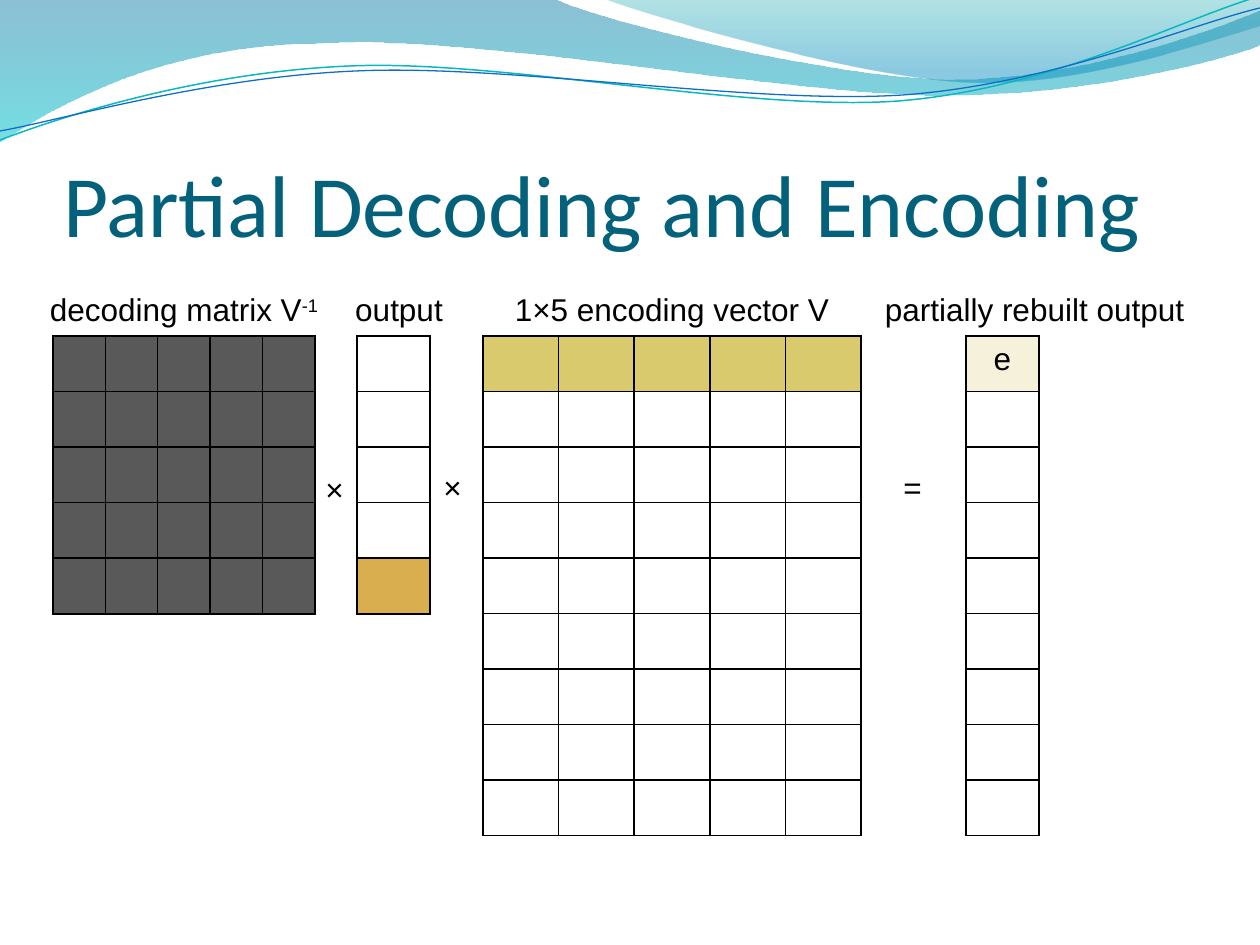
from lxml import etree
from pptx import Presentation
from pptx.dml.color import RGBColor
from pptx.enum.text import MSO_ANCHOR, MSO_AUTO_SIZE, PP_ALIGN
from pptx.oxml import parse_xml
from pptx.oxml.ns import qn
from pptx.util import Pt

PX = 914400 / 126
LEFT, CENTER = PP_ALIGN.LEFT, PP_ALIGN.CENTER
TOP, BOTTOM = MSO_ANCHOR.TOP, MSO_ANCHOR.BOTTOM
NO_FIT, GROW = MSO_AUTO_SIZE.NONE, MSO_AUTO_SIZE.SHAPE_TO_FIT_TEXT
BLACK, WHITE, GREY, YELLOW, ORANGE = "000000", "FFFFFF", "595959", "D9CB6D", "D9AE4E"
BORDER = (
    '<a:{} xmlns:a="http://schemas.openxmlformats.org/drawingml/2006/main" w="12700">'
    '<a:solidFill><a:srgbClr val="' + BLACK + '"/></a:solidFill></a:{}>'
)
color = RGBColor.from_string


def write(paragraph, text, size, font, hex_color, alignment):
    paragraph.alignment = alignment
    run = paragraph.add_run()
    run.text = text
    for name, value in {"size": Pt(size), "name": font}.items():
        setattr(run.font, name, value)
    run.font.color.rgb = color(hex_color)
    return run


def set_alpha(element, percent):
    for srgb in element.iter(qn("a:srgbClr")):
        etree.SubElement(srgb, qn("a:alpha")).set("val", str(percent * 1000))


presentation = Presentation()
presentation.slide_width = round(1260 * PX)
presentation.slide_height = round(945 * PX)
slide = presentation.slides.add_slide(presentation.slide_layouts[5])

# Waves at the top: a pair is a corner, three pairs are a Bézier curve
waves = [
    {"outline": [(0, -1), (554, -1), (600, 21, 837, 79, 955, 79), (1075, 79, 1207, 33, 1260, 11),
                 (1261, 45), (1239, 55, 1096, 96, 940, 95), (784, 95, 481, 35, 324, 43),
                 (161, 44, 58, 105, -1, 142)],
     "stops": [("0074A1", 0, 45), ("00C6CF", 1, 55)]},
    {"outline": [(604, -1), (641, 14, 859, 78, 969, 82), (1079, 87, 1211, 40, 1260, 26),
                 (1260, 0)],
     "stops": [("00A1A9", 0, 30), ("008BBF", 0.8, 45)]},
    {"outline": [(0, 140), (60, 117, 199, 72, 349, 66), (498, 59, 747, 112, 898, 101),
                 (1050, 89, 1182, 19, 1257, -3)],
     "line": ("0AB8BF", 0.85)},
    {"outline": [(0, 131), (58, 121, 207, 77, 357, 71), (508, 64, 752, 105, 903, 95),
                 (1053, 84, 1185, 26, 1260, 8)],
     "line": ("0F6FC6", 0.75)},
]
for wave in waves:
    points = [(round(part[i] * PX), round(part[i + 1] * PX))
              for part in wave["outline"] for i in range(0, len(part), 2)]
    builder = slide.shapes.build_freeform(*points[0])
    builder.add_line_segments(points[1:], close="stops" in wave)
    shape = builder.convert_to_shape()
    shape.shadow.inherit = False

    # Join each three control points into one curve
    segments = iter(list(shape._element.iter(qn("a:lnTo"))))
    for part in wave["outline"][1:]:
        segment = next(segments)
        if len(part) == 6:
            segment.addprevious(curve := etree.Element(qn("a:cubicBezTo")))
            for control in (segment, next(segments), next(segments)):
                curve.append(control[0])
                control.getparent().remove(control)

    if "stops" in wave:
        shape.line.fill.background()
        shape.fill.gradient()
        shape.fill.gradient_angle = 270
        for stop, (hex_color, position, alpha) in zip(shape.fill.gradient_stops, wave["stops"]):
            stop.color.rgb = color(hex_color)
            stop.position = position
            set_alpha(stop._gs, alpha)
    else:
        hex_color, width = wave["line"]
        shape.fill.background()
        shape.line.color.rgb = color(hex_color)
        shape.line.width = Pt(width)

# Title
title = slide.shapes.title
title_box = {"left": 63, "top": 97, "width": 1134, "height": 158}
for name, value in title_box.items():
    setattr(title, name, round(value * PX))
title_format = {"margin_left": 0, "margin_right": 0, "margin_top": round(6 * PX),
                "margin_bottom": 0, "vertical_anchor": BOTTOM, "word_wrap": True,
                "auto_size": NO_FIT}
for name, value in title_format.items():
    setattr(title.text_frame, name, value)
write(title.text_frame.paragraphs[0], "Partial Decoding and Encoding", 50, "Calibri", "04617B", LEFT)

# Matrix captions and operators: text, superscript, left, top, width, wrapped
labels = [
    ("output", "", 325, 284, 148, True),
    ("decoding matrix V", "-1", 32, 284, 304, True),
    ("1×5 encoding vector V", "", 483, 284, 378, True),
    ("partially rebuilt output", "", 861, 284, 347, True),
    ("×", "", 313, 464, 44, False),
    ("×", "", 431, 462, 44, False),
    ("=", "", 891, 462, 44, False),
]
for text, superscript, left, top, width, wrapped in labels:
    box = slide.shapes.add_textbox(*(round(v * PX) for v in (left, top, width, 51)))
    for name, value in {"word_wrap": wrapped, "auto_size": GROW, "vertical_anchor": TOP}.items():
        setattr(box.text_frame, name, value)
    paragraph = box.text_frame.paragraphs[0]
    alignment = CENTER if wrapped else LEFT
    write(paragraph, text, 18, "Arial", BLACK, alignment)
    if superscript:
        run = write(paragraph, superscript, 18, "Arial", BLACK, alignment)
        run.font._element.set("baseline", "30000")

# Matrices: left, width, height, columns, fill of each row
matrices = {
    "decoding": (53, 262, 278, 5, [GREY] * 5),
    "encoding": (483, 378, 500, 5, [YELLOW] + [WHITE] * 8),
    "rebuilt": (966, 73, 500, 1, [YELLOW] + [WHITE] * 8),
    "output": (357, 73, 278, 1, [WHITE] * 4 + [ORANGE]),
}
tables = {}
for matrix, (left, width, height, columns, row_fills) in matrices.items():
    frame = slide.shapes.add_table(len(row_fills), columns,
                                   *(round(v * PX) for v in (left, 336, width, height)))
    table = tables[matrix] = frame.table
    table.first_row = table.horz_banding = False
    for row, hex_color in zip(table.rows, row_fills):
        for cell in row.cells:
            cell.fill.solid()
            cell.fill.fore_color.rgb = color(hex_color)
            for index, side in enumerate(("lnL", "lnR", "lnT", "lnB")):
                cell._tc.tcPr.insert(index, parse_xml(BORDER.format(side, side)))

# Rebuilt element in a pale tint
rebuilt_cell = tables["rebuilt"].cell(0, 0)
set_alpha(rebuilt_cell._tc.tcPr.find(qn("a:solidFill")), 25)
write(rebuilt_cell.text_frame.paragraphs[0], "e", 18, "Arial", BLACK, CENTER)

presentation.save("out.pptx")
